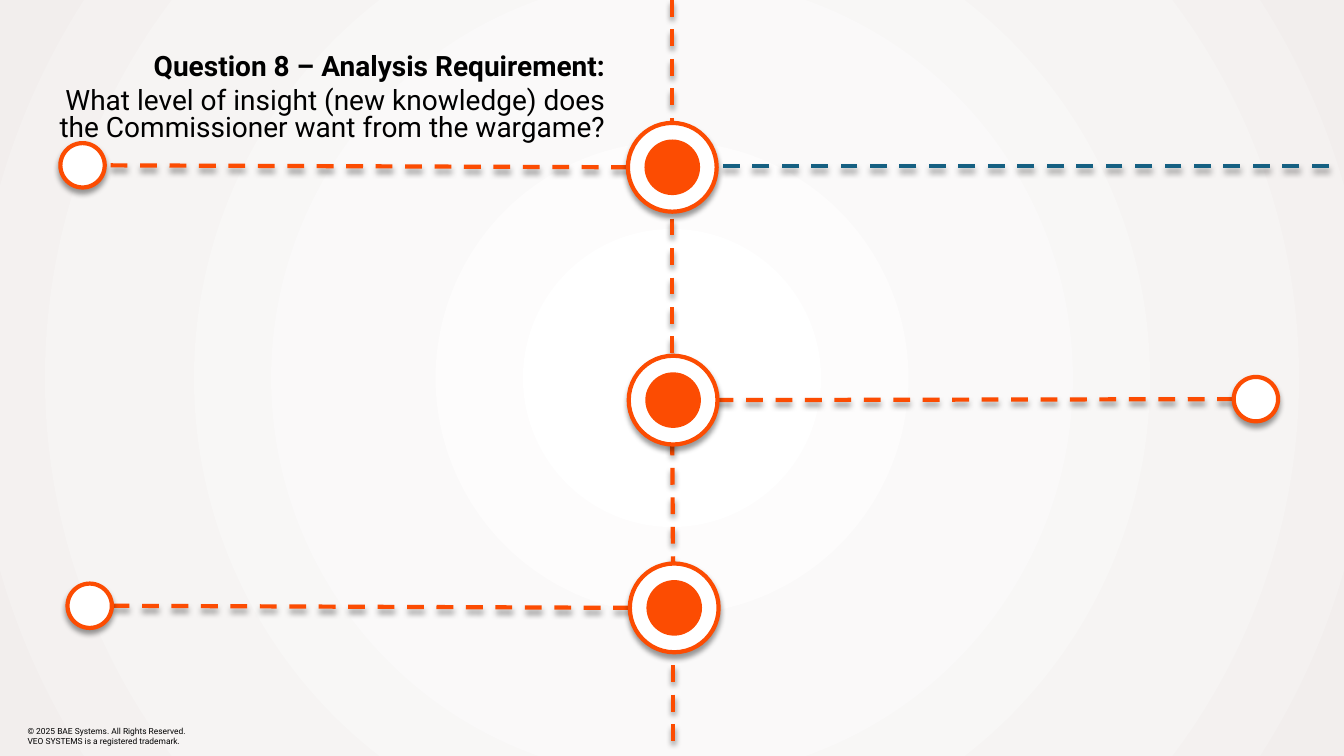
from lxml import etree
from pptx import Presentation
from pptx.dml.color import RGBColor
from pptx.enum.dml import MSO_LINE
from pptx.enum.shapes import MSO_CONNECTOR, MSO_SHAPE
from pptx.enum.text import MSO_ANCHOR, MSO_AUTO_SIZE, PP_ALIGN
from pptx.oxml import parse_xml
from pptx.oxml.ns import nsdecls, qn
from pptx.util import Pt

STRAIGHT = MSO_CONNECTOR.STRAIGHT
OVAL = MSO_SHAPE.OVAL
DASH = MSO_LINE.DASH
MIDDLE = MSO_ANCHOR.MIDDLE
GROW = MSO_AUTO_SIZE.SHAPE_TO_FIT_TEXT
RIGHT = PP_ALIGN.RIGHT

ORANGE, BLUE, WHITE, BLACK = "FC4C02", "156082", "FFFFFF", "000000"
HUB, CORE, NODE = 63.4, 36.7, 31.7
SHADOW = f"""<a:effectLst {nsdecls("a")}>
  <a:outerShdw blurRad="{Pt(4)}" dist="{Pt(3)}" dir="5400000" rotWithShape="0">
    <a:srgbClr val="{BLACK}"><a:alpha val="40000"/></a:srgbClr>
  </a:outerShdw></a:effectLst>"""


def rgb(value):
    return RGBColor.from_string(value)


def finish(sp, color, shadow=True):
    """Give a line or circle its 3 pt outline and its drop shadow."""
    sp.line.color.rgb = rgb(color)
    sp.line.width = Pt(3)
    if shadow:
        sp._element.spPr.append(parse_xml(SHADOW))
    else:
        sp.shadow.inherit = False


prs = Presentation()
prs.slide_width, prs.slide_height = Pt(960), Pt(540)
s = prs.slides.add_slide(prs.slide_layouts[6])

# Background: circular gradient from the centre
s.background.fill.solid()
solid = s.element.find(".//" + qn("p:bgPr")).find(qn("a:solidFill"))
grad = etree.Element(qn("a:gradFill"), rotWithShape="1")
stops = etree.SubElement(grad, qn("a:gsLst"))
for pos, color in [(8, WHITE), (42, "FAF9F9"), (72, "F6F4F3"), (100, "F2EEED")]:
    stop = etree.SubElement(stops, qn("a:gs"), pos=str(pos * 1000))
    etree.SubElement(stop, qn("a:srgbClr"), val=color)
focus = etree.SubElement(grad, qn("a:path"), path="circle")
etree.SubElement(focus, qn("a:fillToRect"), dict.fromkeys("ltrb", "50000"))
solid.getparent().replace(solid, grad)

# Dashed lines: spine from top to bottom, branches to the sides
for x1, y1, x2, y2, color in [
    (949, 118.8, 504, 118.8, BLUE),
    (480.2, 0, 480.2, 114.5, ORANGE),
    (480.2, 156.2, 480.2, 295.2, ORANGE),
    (480.2, 313.2, 481, 446.4, ORANGE),
    (481, 475.2, 481, 533.5, ORANGE),
    (448.6, 119.5, 75.6, 118.1, ORANGE),
    (511.9, 285.8, 881.3, 285.1, ORANGE),
    (450, 434.2, 80.6, 432.7, ORANGE),
]:
    line = s.shapes.add_connector(STRAIGHT, Pt(x1), Pt(y1), Pt(x2), Pt(y2))
    finish(line, color)
    line.line.dash_style = DASH

# Circles by centre: each hub has a core, each branch ends in a node
circles = [(x, y, NODE, WHITE) for x, y in [(59, 118.1), (897.1, 285.1), (64.1, 432.7)]]
for x, y in [(480.2, 119.5), (480.8, 285.8), (481.6, 434.2)]:
    circles += [(x, y, HUB, WHITE), (x, y, CORE, ORANGE)]
for x, y, size, color in circles:
    sp = s.shapes.add_shape(OVAL, Pt(x - size / 2), Pt(y - size / 2), Pt(size), Pt(size))
    sp.fill.solid()
    sp.fill.fore_color.rgb = rgb(color)
    finish(sp, ORANGE, shadow=size != CORE)

# Text boxes: frame, frame format, paragraph format, font size, (text, bold) lines
for box, frame, para, size, lines in [
    ((27.6, 36, 411.8, 71.3), {"auto_size": GROW},
     {"alignment": RIGHT, "line_spacing": 0.8, "space_after": Pt(5)}, 20,
     [("Question 8 – Analysis Requirement:", True),
      ("What level of insight (new knowledge) does the Commissioner want from the wargame?", False)]),
    ((19.7, 514.1, 128.9, 23),
     {"vertical_anchor": MIDDLE, "margin_left": 0, "margin_top": 0,
      "margin_right": 0, "margin_bottom": 0}, {}, 6,
     [("© 2025 BAE Systems. All Rights Reserved.", False),
      ("VEO SYSTEMS is a registered trademark.", False)]),
]:
    tf = s.shapes.add_textbox(*map(Pt, box)).text_frame
    tf.word_wrap = True
    for name, value in frame.items():
        setattr(tf, name, value)
    for i, (text, bold) in enumerate(lines):
        p = tf.add_paragraph() if i else tf.paragraphs[0]
        for name, value in para.items():
            setattr(p, name, value)
        r = p.add_run()
        r.text = text
        for name, value in {"name": "Roboto", "size": Pt(size), "bold": bold}.items():
            setattr(r.font, name, value)
        r.font.color.rgb = rgb(BLACK)

prs.save("out.pptx")
